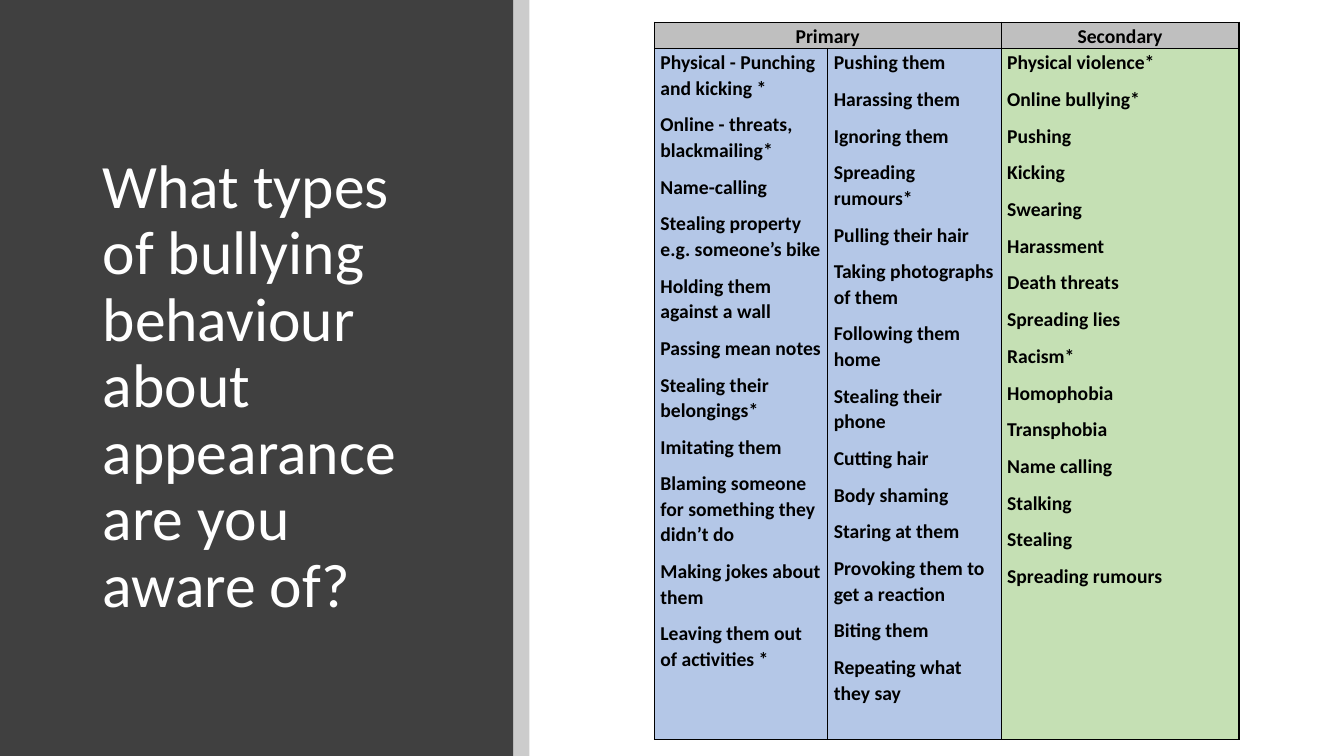
from dataclasses import dataclass
from typing import Optional

from lxml import etree
from pptx import Presentation
from pptx.dml.color import RGBColor
from pptx.enum import shapes, text
from pptx.oxml import ns
from pptx.util import Inches, Pt


@dataclass(frozen=True)
class Theme:
    font: str = "Calibri"
    title_size: int = 44
    table_size: int = 14
    border_width: int = 1
    panel: str = "404040"
    black: str = "000000"
    white: str = "FFFFFF"
    header: str = "BFBFBF"
    primary: str = "B4C7E7"
    secondary: str = "C5E0B4"


THEME = Theme()


@dataclass(frozen=True)
class Band:
    left: float
    width: float
    color: str
    opacity: Optional[int] = None


@dataclass(frozen=True)
class Column:
    width: float
    color: str
    behaviours: tuple[str, ...]


@dataclass(frozen=True)
class Header:
    label: str
    first: int
    last: int


TITLE = "What types of bullying behaviour about appearance are you aware of?"
BANDS = (
    Band(0, 5.09, THEME.panel),
    Band(5.09, 0.16, THEME.black, opacity=20),
)
HEADERS = (Header("Primary", 0, 1), Header("Secondary", 2, 2))
COLUMNS = (
    Column(1.72, THEME.primary, (
        "Physical - Punching and kicking *",
        "Online - threats, blackmailing*",
        "Name-calling",
        "Stealing property e.g. someone’s bike",
        "Holding them against a wall",
        "Passing mean notes",
        "Stealing their belongings*",
        "Imitating them",
        "Blaming someone for something they didn’t do",
        "Making jokes about them",
        "Leaving them out of activities *",
    )),
    Column(1.72, THEME.primary, (
        "Pushing them",
        "Harassing them",
        "Ignoring them",
        "Spreading rumours*",
        "Pulling their hair",
        "Taking photographs of them",
        "Following them home",
        "Stealing their phone",
        "Cutting hair",
        "Body shaming",
        "Staring at them",
        "Provoking them to get a reaction",
        "Biting them",
        "Repeating what they say",
    )),
    Column(2.36, THEME.secondary, (
        "Physical violence*",
        "Online bullying*",
        "Pushing",
        "Kicking",
        "Swearing",
        "Harassment",
        "Death threats",
        "Spreading lies",
        "Racism*",
        "Homophobia",
        "Transphobia",
        "Name calling",
        "Stalking",
        "Stealing",
        "Spreading rumours",
    )),
)
ROW_HEIGHTS = (0.26, 6.86)


def add_text(paragraph, words: str, size: int, color: str, bold: bool = False) -> None:
    run = paragraph.add_run()
    run.text = words
    run.font.name = THEME.font
    run.font.size = Pt(size)
    run.font.bold = bold
    run.font.color.rgb = RGBColor.from_string(color)


def add_band(slide, band: Band) -> None:
    shape = slide.shapes.add_shape(
        shapes.MSO_SHAPE.RECTANGLE, Inches(band.left), 0, Inches(band.width), Inches(7.5)
    )
    shape.shadow.inherit = False
    shape.line.fill.background()
    shape.fill.solid()
    shape.fill.fore_color.rgb = RGBColor.from_string(band.color)
    if band.opacity is not None:
        color = shape.fill._xPr.find(".//" + ns.qn("a:srgbClr"))
        etree.SubElement(color, ns.qn("a:alpha"), val=str(band.opacity * 1000))


def add_title(slide) -> None:
    box = slide.shapes.add_textbox(Inches(0.92), Inches(0.89), Inches(3.65), Inches(5.91))
    frame = box.text_frame
    frame.word_wrap = True
    frame.vertical_anchor = text.MSO_ANCHOR.MIDDLE
    paragraph = frame.paragraphs[0]
    paragraph.line_spacing = 0.9
    add_text(paragraph, TITLE, THEME.title_size, THEME.white)


def add_borders(cell) -> None:
    properties = cell._tc.get_or_add_tcPr()
    for position, side in enumerate(("a:lnL", "a:lnR", "a:lnT", "a:lnB")):
        line = etree.Element(ns.qn(side), w=str(Pt(THEME.border_width)))
        fill = etree.SubElement(line, ns.qn("a:solidFill"))
        etree.SubElement(fill, ns.qn("a:srgbClr"), val=THEME.black)
        properties.insert(position, line)


def style_cell(cell, color: str) -> None:
    cell.margin_left = cell.margin_right = Inches(0.06)
    cell.margin_top = Inches(0.01)
    cell.margin_bottom = 0
    cell.fill.solid()
    cell.fill.fore_color.rgb = RGBColor.from_string(color)
    add_borders(cell)


def write_cell(cell, lines: tuple[str, ...], alignment: text.PP_ALIGN) -> None:
    frame = cell.text_frame
    for index, line in enumerate(lines):
        paragraph = frame.add_paragraph() if index else frame.paragraphs[0]
        paragraph.alignment = alignment
        paragraph.line_spacing = 1.07
        paragraph.space_after = Pt(8)
        add_text(paragraph, line, THEME.table_size, THEME.black, bold=True)


def add_behaviour_table(slide) -> None:
    width = sum(column.width for column in COLUMNS)
    table = slide.shapes.add_table(
        len(ROW_HEIGHTS), len(COLUMNS),
        Inches(6.49), Inches(0.22), Inches(width), Inches(sum(ROW_HEIGHTS)),
    ).table
    table.horz_banding = False
    for row, height in zip(table.rows, ROW_HEIGHTS):
        row.height = Inches(height)
    for index, column in enumerate(COLUMNS):
        table.columns[index].width = Inches(column.width)
        style_cell(table.cell(0, index), THEME.header)
        style_cell(table.cell(1, index), column.color)
        write_cell(table.cell(1, index), column.behaviours, text.PP_ALIGN.LEFT)
    for header in HEADERS:
        cell = table.cell(0, header.first)
        if header.last > header.first:
            cell.merge(table.cell(0, header.last))
        write_cell(cell, (header.label,), text.PP_ALIGN.CENTER)


def main() -> None:
    presentation = Presentation()
    presentation.slide_width = Inches(13.33)
    presentation.slide_height = Inches(7.5)
    slide = presentation.slides.add_slide(presentation.slide_layouts[6])
    for band in BANDS:
        add_band(slide, band)
    add_title(slide)
    add_behaviour_table(slide)
    presentation.save("out.pptx")


if __name__ == "__main__":
    main()
